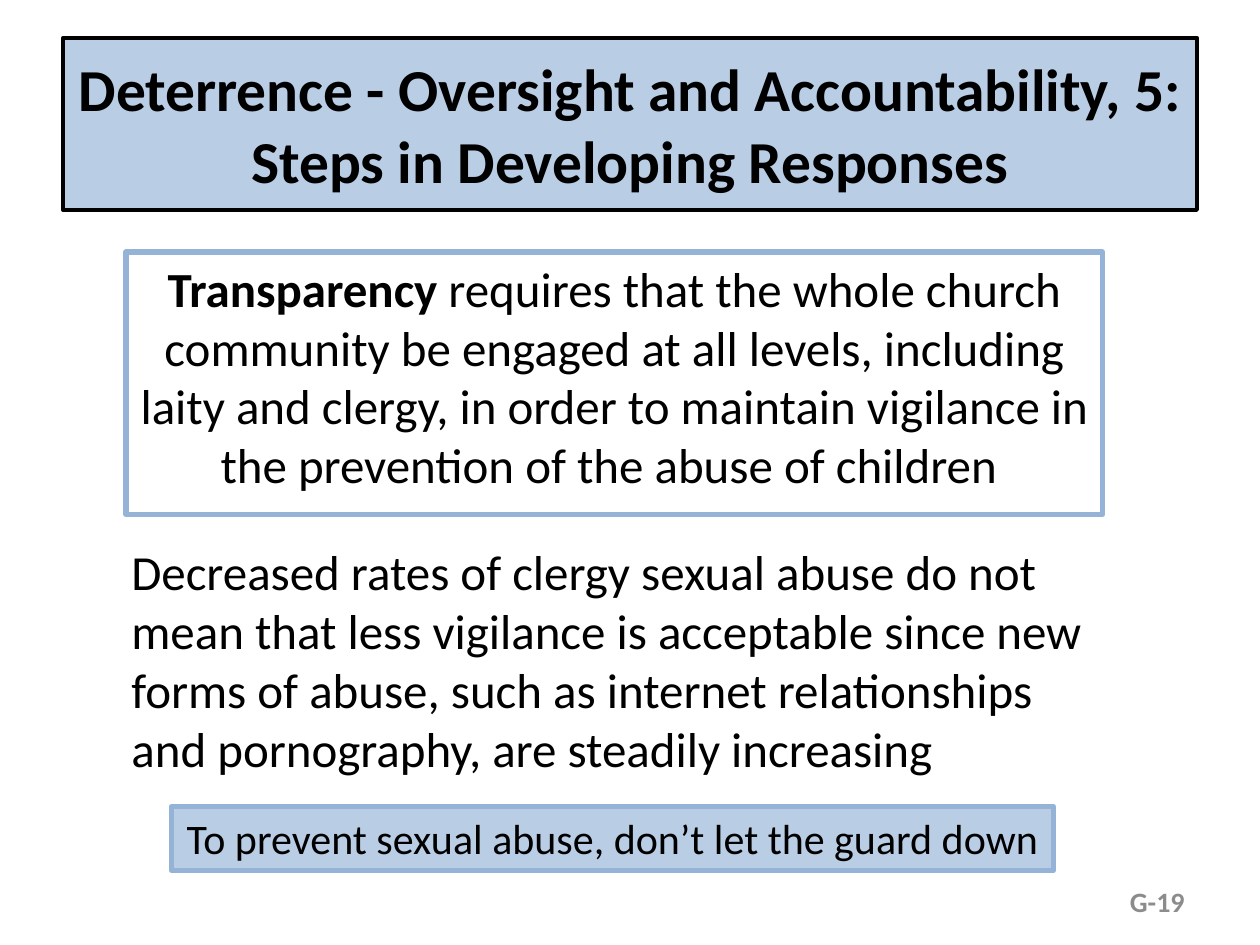
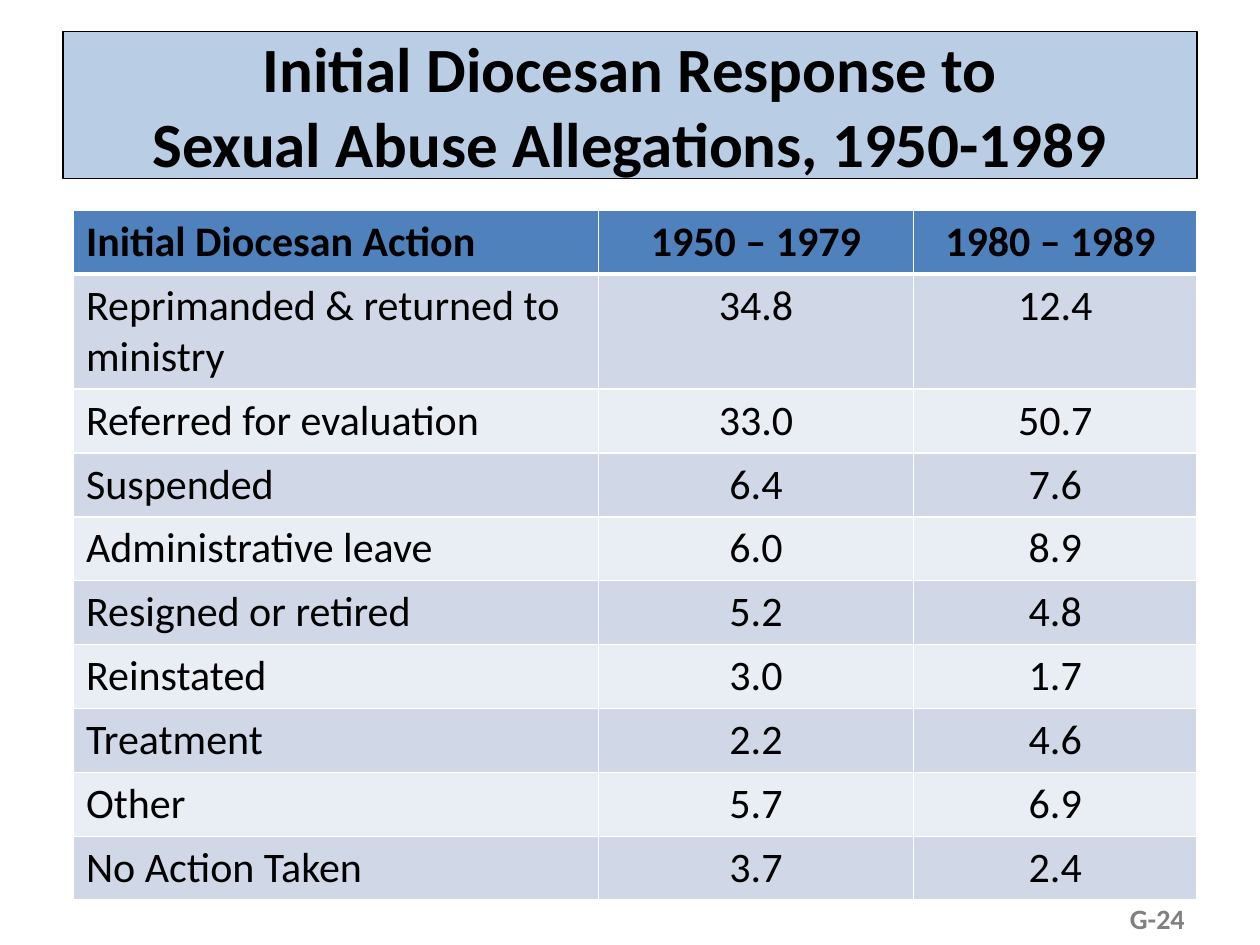
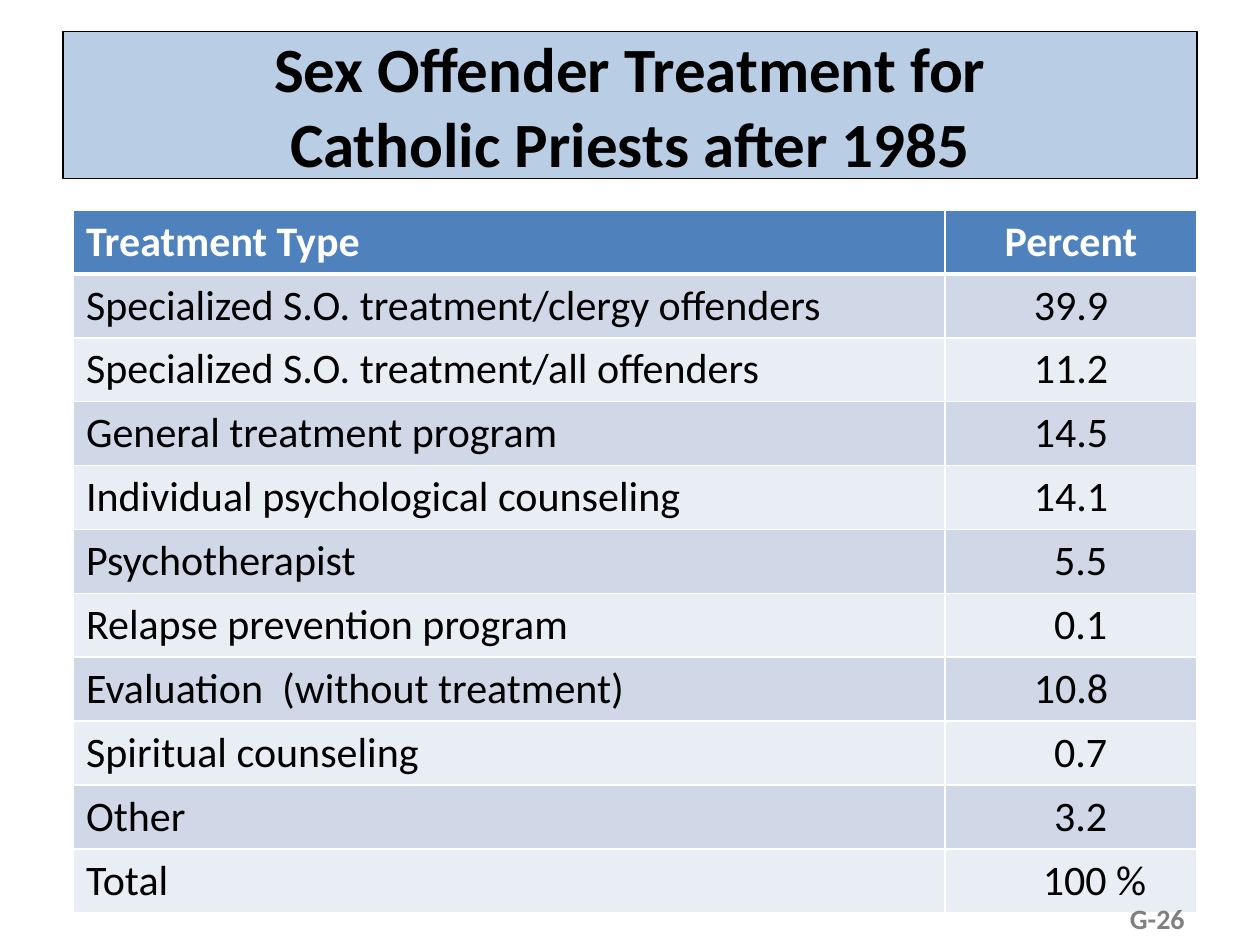
from dataclasses import dataclass

from lxml.etree import SubElement
from pptx import Presentation
from pptx.dml.color import RGBColor
from pptx.enum.text import MSO_ANCHOR, MSO_AUTO_SIZE, PP_ALIGN
from pptx.oxml.ns import qn
from pptx.util import Pt


@dataclass(frozen=True)
class Theme:
    font: str = "Calibri"
    black: str = "000000"
    white: str = "FFFFFF"
    band: str = "B9CDE5"
    outline: str = "95B3D7"
    header: str = "4F81BD"
    stripes: tuple = ("D0D8E8", "E9EDF4")
    light_gray: str = "8C8C8C"
    gray: str = "808080"
    long_title: float = 34
    title: float = 36
    body: float = 28
    table: float = 24
    page_number: float = 16


THEME = Theme()
TITLE_AND_BODY, TITLE_ONLY = 1, 5
LEFT, CENTER, RIGHT = PP_ALIGN.LEFT, PP_ALIGN.CENTER, PP_ALIGN.RIGHT
TITLE_BOX = (36, 18, 648, 84)
TABLE_LEFT, TABLE_TOP, ROW_HEIGHT = 42, 120, 36.5


@dataclass(frozen=True)
class Padded:
    """Cell text pushed to the right by extra left margin."""
    text: str
    padding: float


# Shared formatting
def color(value):
    return RGBColor.from_string(value)


def format_text(text_frame, size, fill=THEME.black, bold=False, align=LEFT):
    for paragraph in text_frame.paragraphs:
        paragraph.alignment = align
        for run in paragraph.runs:
            font = run.font
            font.name, font.size, font.bold = THEME.font, Pt(size), bold
            font.color.rgb = color(fill)


def place(shape, box):
    shape.left, shape.top, shape.width, shape.height = map(Pt, box)


def outline(shape, line, width, fill=None):
    if fill:
        shape.fill.solid()
        shape.fill.fore_color.rgb = color(fill)
    shape.line.color.rgb = color(line)
    shape.line.width = Pt(width)


# Text elements
def add_title(slide, text, box=TITLE_BOX, size=THEME.title, line_width=0.75):
    title = slide.shapes.title
    place(title, box)
    outline(title, THEME.black, line_width, THEME.band)
    title.text_frame.text = text
    title.text_frame.auto_size = MSO_AUTO_SIZE.NONE
    title.text_frame.vertical_anchor = MSO_ANCHOR.MIDDLE
    format_text(title.text_frame, size, bold=True, align=CENTER)


def add_framed_body(slide, lead, rest, box):
    body = slide.placeholders[1]
    place(body, box)
    outline(body, THEME.outline, 3)
    text_frame = body.text_frame
    text_frame.auto_size = MSO_AUTO_SIZE.NONE
    paragraph = text_frame.paragraphs[0]
    for text in (lead, rest):
        paragraph.add_run().text = text
    format_text(text_frame, THEME.body, align=CENTER)
    paragraph.runs[0].font.bold = True
    properties = paragraph._p.get_or_add_pPr()
    properties.set("marL", "0")
    properties.set("indent", "0")
    SubElement(properties, qn("a:buNone"))


def add_text(slide, text, box, size, **style):
    text_box = slide.shapes.add_textbox(*map(Pt, box))
    text_box.text_frame.word_wrap = True
    text_box.text_frame.text = text
    format_text(text_box.text_frame, size, **style)
    return text_box


def add_page_number(slide, text, top, fill=THEME.gray):
    number = add_text(slide, text, (516, top, 168, 28.75), THEME.page_number,
                      fill=fill, bold=True, align=RIGHT)
    number.text_frame.vertical_anchor = MSO_ANCHOR.MIDDLE


# Table
def add_borders(cell, top=1, bottom=1):
    properties = cell._tc.get_or_add_tcPr()
    for side, width in (("L", 1), ("R", 1), ("T", top), ("B", bottom)):
        line = SubElement(properties, qn(f"a:ln{side}"), w=str(Pt(width)))
        fill = SubElement(line, qn("a:solidFill"))
        SubElement(fill, qn("a:srgbClr"), val=THEME.white)


def fill_cell(cell, content, row, column, header_color):
    is_header = row == 0
    if isinstance(content, Padded):
        cell.margin_left = Pt(7.2 + content.padding)
        content = content.text
    cell.text_frame.text = content
    format_text(cell.text_frame, THEME.table,
                fill=header_color if is_header else THEME.black,
                bold=is_header, align=CENTER if column else LEFT)
    add_borders(cell, top=3 if row == 1 else 1, bottom=3 if is_header else 1)
    cell.fill.solid()
    background = THEME.header if is_header else THEME.stripes[(row - 1) % 2]
    cell.fill.fore_color.rgb = color(background)


def add_striped_table(slide, rows, widths, header_color, tall_rows=None):
    heights = [(tall_rows or {}).get(row, ROW_HEIGHT) for row in range(len(rows))]
    table = slide.shapes.add_table(
        len(rows), len(widths), Pt(TABLE_LEFT), Pt(TABLE_TOP),
        Pt(sum(widths)), Pt(sum(heights))).table
    for column, width in zip(table.columns, widths):
        column.width = Pt(width)
    for row, height in zip(table.rows, heights):
        row.height = Pt(height)
    for row, contents in enumerate(rows):
        for column, content in enumerate(contents):
            fill_cell(table.cell(row, column), content, row, column, header_color)


# Slides
RESPONSES = [
    ("Initial Diocesan Action", "1950 – 1979", "1980 – 1989 "),
    ("Reprimanded & returned to ministry", "34.8", "12.4"),
    ("Referred for evaluation", "33.0", "50.7"),
    ("Suspended", "6.4", "7.6"),
    ("Administrative leave", "6.0", "8.9"),
    ("Resigned or retired", "5.2", "4.8"),
    ("Reinstated", "3.0", "1.7"),
    ("Treatment", "2.2", "4.6"),
    ("Other", "5.7", "6.9"),
    ("No Action Taken", "3.7", "2.4"),
]

DIGIT = 11
TREATMENTS = [
    ("Treatment Type", "Percent"),
    ("Specialized S.O. treatment/clergy offenders", "39.9"),
    ("Specialized S.O. treatment/all offenders", "11.2"),
    ("General treatment program", "14.5"),
    ("Individual psychological counseling", "14.1"),
    ("Psychotherapist", Padded("5.5", DIGIT)),
    ("Relapse prevention program", Padded("0.1", DIGIT)),
    ("Evaluation  (without treatment)", "10.8"),
    ("Spiritual counseling", Padded("0.7", DIGIT)),
    ("Other", Padded("3.2", DIGIT)),
    ("Total", Padded("100 %", 27)),
]


def build_transparency(presentation):
    slide = presentation.slides.add_slide(presentation.slide_layouts[TITLE_AND_BODY])
    add_title(slide, "Deterrence - Oversight and Accountability, 5:\v"
              "Steps in Developing Responses",
              (36, 21.6, 648, 98.4), THEME.long_title, 2.25)
    add_framed_body(
        slide, "Transparency",
        " requires that the whole church community be engaged at all levels, "
        "including laity and clergy, in order to maintain vigilance in the "
        "prevention of the abuse of children ", (72, 144, 558, 150))
    add_page_number(slide, "G-19", 500.5, THEME.light_gray)
    add_text(
        slide, "Decreased rates of clergy sexual abuse do not mean that less "
        "vigilance is acceptable since new forms of abuse, such as internet "
        "relationships and pornography, are steadily increasing",
        (68, 306, 564, 143.5), THEME.body)
    motto = add_text(slide, "To prevent sexual abuse, don’t let the guard down",
                     (98, 461, 504, 36.35), THEME.table, align=CENTER)
    outline(motto, THEME.outline, 3, THEME.band)


def build_responses(presentation):
    slide = presentation.slides.add_slide(presentation.slide_layouts[TITLE_ONLY])
    add_title(slide, "Initial Diocesan Response to\vSexual Abuse Allegations, 1950-1989")
    add_striped_table(slide, RESPONSES, (300, 180, 162), THEME.black, {1: 65.5})
    add_page_number(slide, "G-24", 510.5)


def build_treatments(presentation):
    slide = presentation.slides.add_slide(presentation.slide_layouts[TITLE_ONLY])
    add_title(slide, "Sex Offender Treatment for\vCatholic Priests after 1985")
    add_striped_table(slide, TREATMENTS, (498, 144), THEME.white)
    add_page_number(slide, "G-26", 510.5)


def main():
    presentation = Presentation()
    presentation.slide_width, presentation.slide_height = Pt(720), Pt(540)
    build_transparency(presentation)
    build_responses(presentation)
    build_treatments(presentation)
    presentation.save("out.pptx")


if __name__ == "__main__":
    main()
